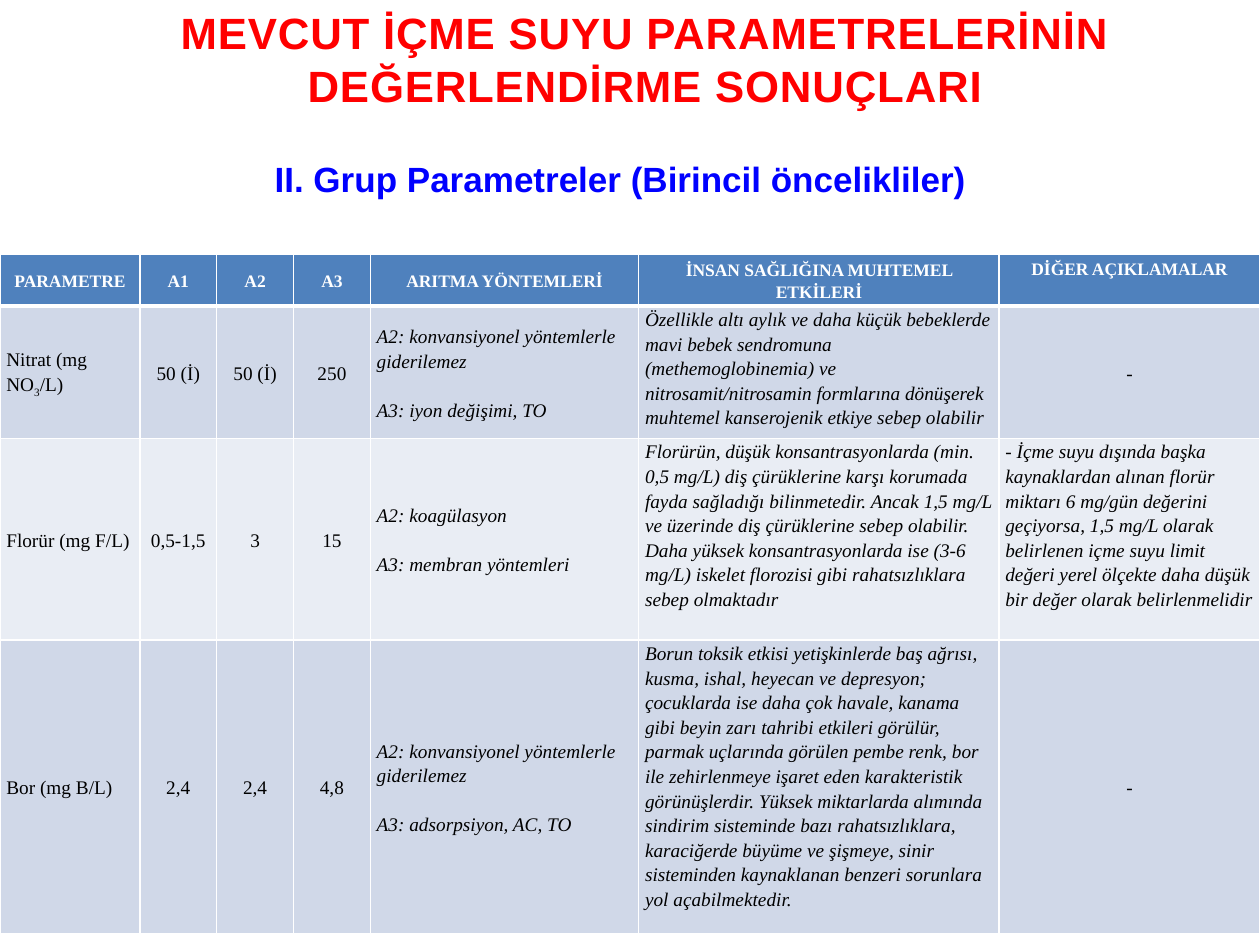
from lxml import etree
from pptx import Presentation
from pptx.dml.color import RGBColor
from pptx.enum.text import MSO_ANCHOR as ANCHOR, MSO_AUTO_SIZE as AUTO, PP_ALIGN as ALIGN
from pptx.oxml.ns import qn
from pptx.util import Inches, Pt

# Content
TITLE = "MEVCUT İÇME SUYU PARAMETRELERİNİN DEĞERLENDİRME SONUÇLARI"
SUBTITLE = "II. Grup Parametreler (Birincil öncelikliler)"
HEADER = ["PARAMETRE", "A1", "A2", "A3", "ARITMA YÖNTEMLERİ",
          "İNSAN SAĞLIĞINA MUHTEMEL ETKİLERİ", "DİĞER AÇIKLAMALAR"]
# A line break starts a new paragraph; text between underscores is a subscript
BODY = [
    ["Nitrat (mg NO_3_/L)", "50 (İ)", "50 (İ)", "250",
     "A2: konvansiyonel yöntemlerle giderilemez\nA3: iyon değişimi, TO",
     "Özellikle altı aylık ve daha küçük bebeklerde mavi bebek sendromuna "
     "(methemoglobinemia) ve nitrosamit/nitrosamin formlarına dönüşerek "
     "muhtemel kanserojenik etkiye sebep olabilir", "-"],
    ["Florür (mg F/L)", "0,5-1,5", "3", "15",
     "A2: koagülasyon\nA3: membran yöntemleri",
     "Florürün, düşük konsantrasyonlarda (min. 0,5 mg/L) diş çürüklerine karşı "
     "korumada fayda sağladığı bilinmetedir. Ancak 1,5 mg/L ve üzerinde diş "
     "çürüklerine sebep olabilir. Daha yüksek konsantrasyonlarda ise (3-6 mg/L) "
     "iskelet florozisi gibi rahatsızlıklara sebep olmaktadır",
     "- İçme suyu dışında başka kaynaklardan alınan florür miktarı 6 mg/gün "
     "değerini geçiyorsa, 1,5 mg/L olarak belirlenen içme suyu limit değeri "
     "yerel ölçekte daha düşük bir değer olarak belirlenmelidir"],
    ["Bor (mg B/L)", "2,4", "2,4", "4,8",
     "A2: konvansiyonel yöntemlerle giderilemez\nA3: adsorpsiyon, AC, TO",
     "Borun toksik etkisi yetişkinlerde baş ağrısı, kusma, ishal, heyecan ve "
     "depresyon; çocuklarda ise daha çok havale, kanama gibi beyin zarı tahribi "
     "etkileri görülür, parmak uçlarında görülen pembe renk, bor ile "
     "zehirlenmeye işaret eden karakteristik görünüşlerdir. Yüksek miktarlarda "
     "alımında sindirim sisteminde bazı rahatsızlıklara, karaciğerde büyüme ve "
     "şişmeye, sinir sisteminden kaynaklanan benzeri sorunlara yol "
     "açabilmektedir.", "-"],
]
COL_WIDTHS = [1.11, 0.61, 0.61, 0.61, 2.13, 2.86, 2.07]
ROW_HEIGHTS = [0.41, 1.05, 1.6, 2.33]
METHODS, EFFECTS, NOTES = 4, 5, 6
HEADER_FILL, BAND_FILLS = "4F81BD", ("E9EDF4", "D0D8E8")


def rgb(color):
    return RGBColor.from_string(color)


def style(p, font, size, color, align, spacing, bold=False, italic=False):
    p.alignment, p.line_spacing = align, spacing
    f = p.font
    f.name, f.size, f.bold, f.italic = font, Pt(size), bold, italic
    f.color.rgb = rgb(color)


def add_heading(s, box, text, size, color, spacing, tracking=0):
    tf = s.shapes.add_textbox(*map(Inches, box)).text_frame
    tf.word_wrap, tf.auto_size = True, AUTO.NONE
    p = tf.paragraphs[0]
    r = p.add_run()
    r.text = text
    if tracking:
        r.font._element.set("spc", str(int(tracking * 100)))
    style(p, "Arial", size, color, ALIGN.CENTER, spacing, bold=True)


def set_borders(cell, **widths):
    tc_pr = cell._tc.get_or_add_tcPr()
    for side, width in widths.items():
        ln = etree.SubElement(tc_pr, qn("a:ln" + side), w=str(Pt(width)))
        fill = etree.SubElement(ln, qn("a:solidFill"))
        etree.SubElement(fill, qn("a:srgbClr"), val="FFFFFF")


def fill_cell(cell, row, col, text):
    head = row == 0
    prose = not head and (col == EFFECTS or col == NOTES and len(text) > 1)
    left = not head and (col in (0, METHODS) or prose)
    top_note = head and col == NOTES
    cell.margin_left = cell.margin_right = Inches(0.05)
    cell.margin_top = Inches(0.02 if top_note else 0)
    cell.margin_bottom = 0
    cell.vertical_anchor = ANCHOR.TOP if prose or top_note else ANCHOR.MIDDLE
    set_borders(cell, L=1, R=1, T=3 if row == 1 else 1, B=3 if head else 1)
    cell.fill.solid()
    cell.fill.fore_color.rgb = rgb(HEADER_FILL if head else BAND_FILLS[row % 2])
    tf = cell.text_frame
    for i, line in enumerate(text.split("\n")):
        p = tf.add_paragraph() if i else tf.paragraphs[0]
        if i:
            p.space_before = Pt(14)
        for j, part in enumerate(line.split("_")):
            r = p.add_run()
            r.text = part
            if j % 2:
                r.font._element.set("baseline", "-25000")
        style(p, "Times New Roman", 10 if head else 11,
              "FFFFFF" if head else "000000",
              ALIGN.LEFT if left else ALIGN.CENTER, 1.15,
              bold=head, italic=prose or (not head and col == METHODS))


prs = Presentation()
prs.slide_width, prs.slide_height = Inches(10), Inches(7.5)
s = prs.slides.add_slide(prs.slide_layouts[6])

# Headings
add_heading(s, (1.22, 0, 7.8, 0.94), TITLE, 25, "FF0000", 1.0, tracking=0.5)
add_heading(s, (0.2, 1.07, 9.45, 0.99), SUBTITLE, 20, "0000FF", 1.4)

# Parameter table
rows = [HEADER] + BODY
table = s.shapes.add_table(len(rows), len(HEADER), Inches(0), Inches(2.02),
                           Inches(10), Inches(sum(ROW_HEIGHTS))).table
for column, width in zip(table.columns, COL_WIDTHS):
    column.width = Inches(width)
for i, (texts, height) in enumerate(zip(rows, ROW_HEIGHTS)):
    table.rows[i].height = Inches(height)
    for j, text in enumerate(texts):
        fill_cell(table.cell(i, j), i, j, text)

prs.save("out.pptx")
